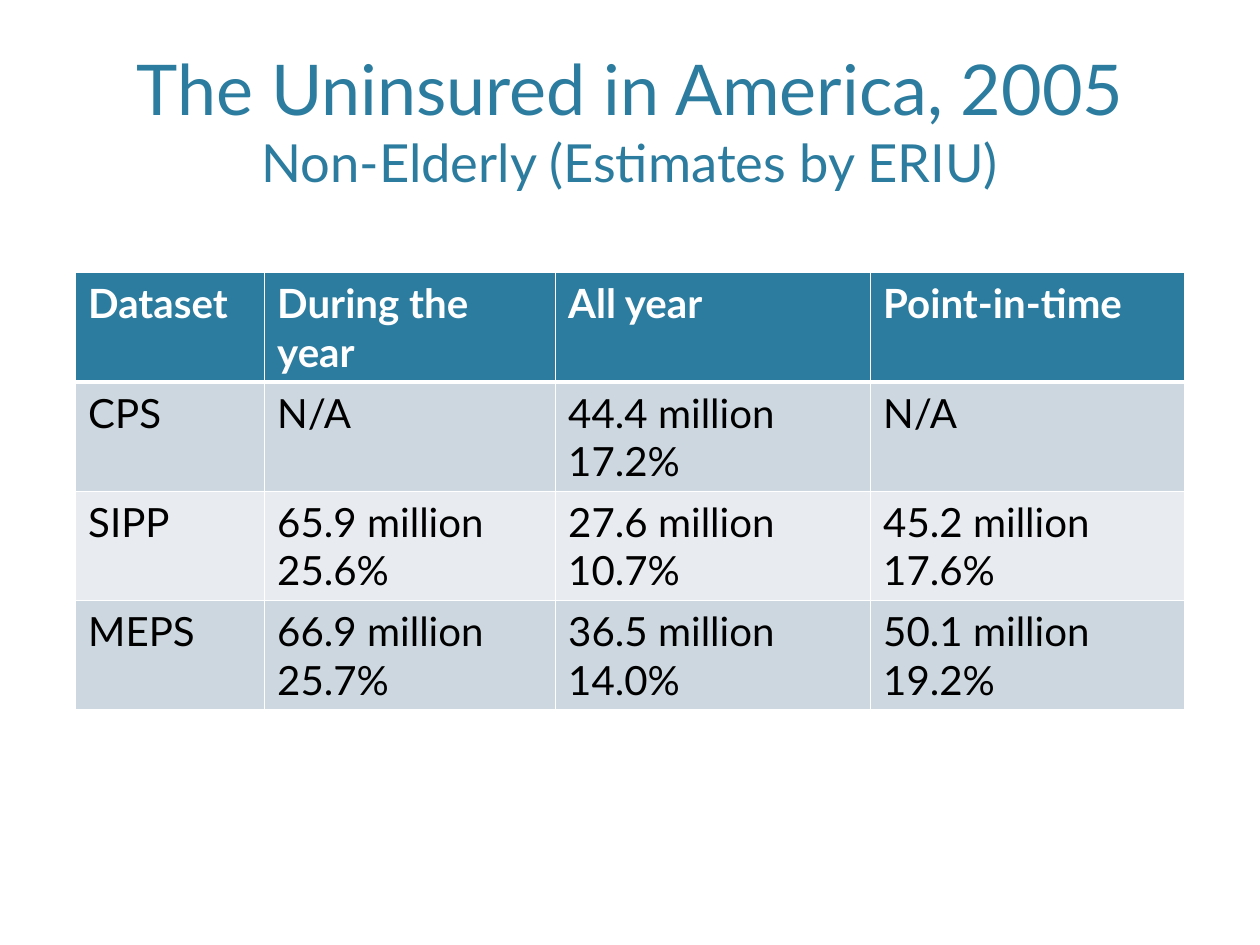
from dataclasses import dataclass

from lxml import etree
from pptx import Presentation
from pptx.dml.color import RGBColor
from pptx.enum.text import MSO_ANCHOR, PP_ALIGN
from pptx.oxml.ns import qn
from pptx.util import Pt

CENTER = PP_ALIGN.CENTER
BOTTOM = MSO_ANCHOR.BOTTOM


@dataclass(frozen=True)
class Theme:
    font: str = "Lato"
    accent: str = "2C7C9F"
    white: str = "FFFFFF"
    ink: str = "000000"
    bands: tuple = ("CDD7DF", "E8ECF0")
    title: float = 40
    subtitle: float = 30
    body: float = 23


T = Theme()


def add_text(p, text, size=T.body, color=T.ink, bold=False):
    r = p.add_run()
    r.text = text
    r.font.name = T.font
    r.font.size = Pt(size)
    r.font.bold = bold
    r.font.color.rgb = RGBColor.from_string(color)


def set_borders(cell, color, **widths):
    tcPr = cell._tc.get_or_add_tcPr()
    for i, (side, width) in enumerate(widths.items()):
        ln = etree.Element(qn(f"a:ln{side}"), w=str(Pt(width)))
        fill = etree.SubElement(ln, qn("a:solidFill"))
        etree.SubElement(fill, qn("a:srgbClr"), val=color)
        tcPr.insert(i, ln)


prs = Presentation()
prs.slide_width, prs.slide_height = Pt(720), Pt(540)
s = prs.slides.add_slide(prs.slide_layouts[6])

sp = s.shapes.add_textbox(Pt(43.2), Pt(8.64), Pt(633.6), Pt(105.12))
tf = sp.text_frame
tf.word_wrap = True
tf.vertical_anchor = BOTTOM
p = tf.paragraphs[0]
p.alignment = CENTER
add_text(p, "The Uninsured in America, 2005", size=T.title, color=T.accent)
p.add_line_break()
add_text(p, "Non-Elderly (Estimates by ERIU)", size=T.subtitle, color=T.accent)

rows = [
    ["Dataset", "During the year", "All year", "Point-in-time"],
    ["CPS", "N/A", "44.4 million\n17.2%", "N/A"],
    ["SIPP", "65.9 million\n25.6%", "27.6 million\n10.7%", "45.2 million\n17.6%"],
    ["MEPS", "66.9 million\n25.7%", "36.5 million\n14.0%", "50.1 million\n19.2%"],
]
col_widths = [108, 166.3, 180, 179.3]
row_height = 62.5

table = s.shapes.add_table(
    len(rows), len(col_widths), Pt(43.2), Pt(155.8),
    Pt(sum(col_widths)), Pt(row_height * len(rows)),
).table
for col, width in zip(table.columns, col_widths):
    col.width = Pt(width)

for i, row in enumerate(rows):
    table.rows[i].height = Pt(row_height)
    header = i == 0
    fill = T.accent if header else T.bands[(i - 1) % 2]
    for j, value in enumerate(row):
        cell = table.cell(i, j)
        cell.fill.solid()
        cell.fill.fore_color.rgb = RGBColor.from_string(fill)
        set_borders(cell, T.white, L=1, R=1, T=3 if i == 1 else 1, B=3 if header else 1)
        tf = cell.text_frame
        for k, line in enumerate(value.split("\n")):
            p = tf.add_paragraph() if k else tf.paragraphs[0]
            add_text(p, line, color=T.white if header else T.ink, bold=header)

prs.save("out.pptx")
